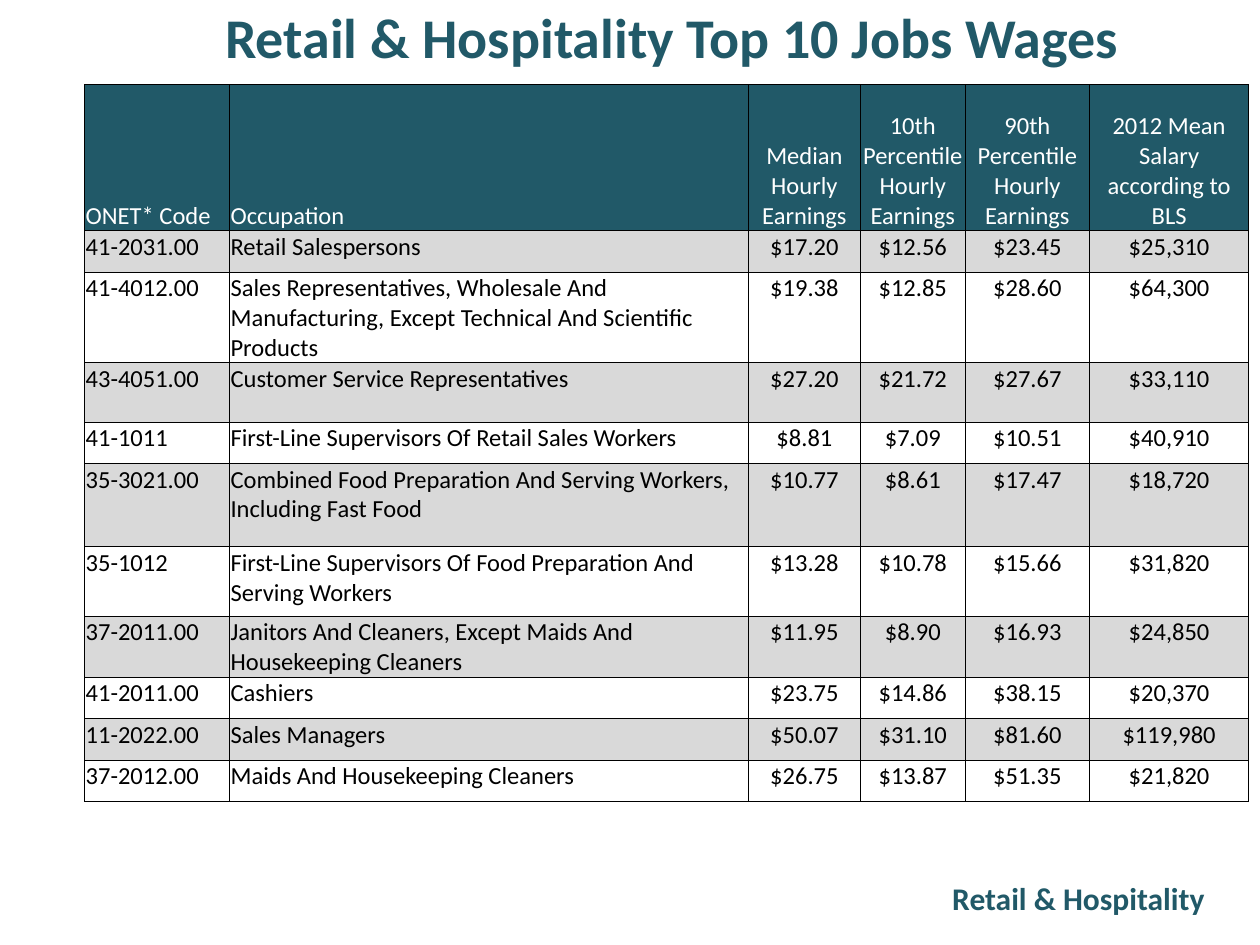
from lxml.etree import SubElement
from pptx import Presentation
from pptx.dml.color import RGBColor
from pptx.enum.text import MSO_ANCHOR, MSO_AUTO_SIZE, PP_ALIGN
from pptx.oxml.ns import qn
from pptx.util import Inches, Pt

COLORS = {"teal": "215968", "gray": "D9D9D9", "white": "FFFFFF", "black": "000000"}
WIDTHS = [1.15, 4.12, 0.89, 0.83, 0.99, 1.26]
HEIGHTS = [1.16, 0.33, 0.33, 0.47, 0.33, 0.66, 0.55, 0.33, 0.33, 0.33, 0.33]
WAGES = [
    ("ONET* Code", "Occupation", "Median Hourly Earnings",
     "10th Percentile Hourly Earnings", "90th Percentile Hourly Earnings",
     "2012 Mean Salary according to BLS"),
    ("41-2031.00", "Retail Salespersons", "$17.20", "$12.56", "$23.45", "$25,310"),
    ("41-4012.00", "Sales Representatives, Wholesale And Manufacturing, "
     "Except Technical And Scientific Products", "$19.38", "$12.85", "$28.60", "$64,300"),
    ("43-4051.00", "Customer Service Representatives",
     "$27.20", "$21.72", "$27.67", "$33,110"),
    ("41-1011", "First-Line Supervisors Of Retail Sales Workers",
     "$8.81", "$7.09", "$10.51", "$40,910"),
    ("35-3021.00", "Combined Food Preparation And Serving Workers, Including Fast Food",
     "$10.77", "$8.61", "$17.47", "$18,720"),
    ("35-1012", "First-Line Supervisors Of Food Preparation And Serving Workers",
     "$13.28", "$10.78", "$15.66", "$31,820"),
    ("37-2011.00", "Janitors And Cleaners, Except Maids And Housekeeping Cleaners",
     "$11.95", "$8.90", "$16.93", "$24,850"),
    ("41-2011.00", "Cashiers", "$23.75", "$14.86", "$38.15", "$20,370"),
    ("11-2022.00", "Sales Managers", "$50.07", "$31.10", "$81.60", "$119,980"),
    ("37-2012.00", "Maids And Housekeeping Cleaners",
     "$26.75", "$13.87", "$51.35", "$21,820"),
]


class Deck:
    """Holds the slide and the style of its elements."""

    def __init__(self, slide, face="Calibri"):
        self.slide = slide
        self.face = face

    def style(self, frame, text, size, color, align, bold=False):
        frame.text = text
        para = frame.paragraphs[0]
        para.alignment = align
        font = para.font
        font.name, font.size, font.bold = self.face, Pt(size), bold
        font.color.rgb = RGBColor.from_string(COLORS[color])

    def heading(self, shape, text, size, align):
        frame = shape.text_frame
        frame.word_wrap = True
        frame.auto_size = MSO_AUTO_SIZE.NONE
        frame.vertical_anchor = MSO_ANCHOR.MIDDLE
        self.style(frame, text, size, "teal", align, True)

    def title(self, text, left, top, width, height):
        shape = self.slide.shapes.title
        shape.left, shape.top = Inches(left), Inches(top)
        shape.width, shape.height = Inches(width), Inches(height)
        self.heading(shape, text, 32, PP_ALIGN.CENTER)

    def footer(self, text, *box):
        shape = self.slide.shapes.add_textbox(*map(Inches, box))
        self.heading(shape, text, 18, PP_ALIGN.RIGHT)

    def border(self, cell):
        props = cell._tc.get_or_add_tcPr()
        for index, side in enumerate(("lnL", "lnR", "lnT", "lnB")):
            line = props.makeelement(qn(f"a:{side}"), {"w": str(Pt(0.5))})
            fill = SubElement(line, qn("a:solidFill"))
            SubElement(fill, qn("a:srgbClr"), val=COLORS["black"])
            props.insert(index, line)

    def cell(self, cell, text, row, col):
        cell.margin_left = cell.margin_right = cell.margin_top = Inches(0.01)
        cell.margin_bottom = 0
        cell.vertical_anchor = MSO_ANCHOR.TOP if row else MSO_ANCHOR.BOTTOM
        align = PP_ALIGN.LEFT if col < 2 else PP_ALIGN.CENTER
        self.style(cell.text_frame, text, 14, "black" if row else "white", align)
        if row and row % 2 == 0:
            cell.fill.background()
        else:
            cell.fill.solid()
            cell.fill.fore_color.rgb = RGBColor.from_string(COLORS["gray" if row else "teal"])
        self.border(cell)

    def table(self, rows, left, top):
        table = self.slide.shapes.add_table(
            len(rows), len(WIDTHS), Inches(left), Inches(top),
            Inches(sum(WIDTHS)), Inches(sum(HEIGHTS))).table
        table.first_row = table.horz_banding = False
        for column, width in zip(table.columns, WIDTHS):
            column.width = Inches(width)
        for row, (values, height) in enumerate(zip(rows, HEIGHTS)):
            table.rows[row].height = Inches(height)
            for col, text in enumerate(values):
                self.cell(table.cell(row, col), text, row, col)


def main():
    show = Presentation()
    show.slide_width, show.slide_height = Inches(10), Inches(7.5)
    deck = Deck(show.slides.add_slide(show.slide_layouts[5]))
    deck.title("Retail & Hospitality Top 10 Jobs Wages", 0.67, 0, 9.33, 0.58)
    deck.footer("Retail & Hospitality", 3.58, 6.86, 6.08, 0.53)
    deck.table(WAGES, 0.67, 0.67)
    show.save("out.pptx")


if __name__ == "__main__":
    main()
